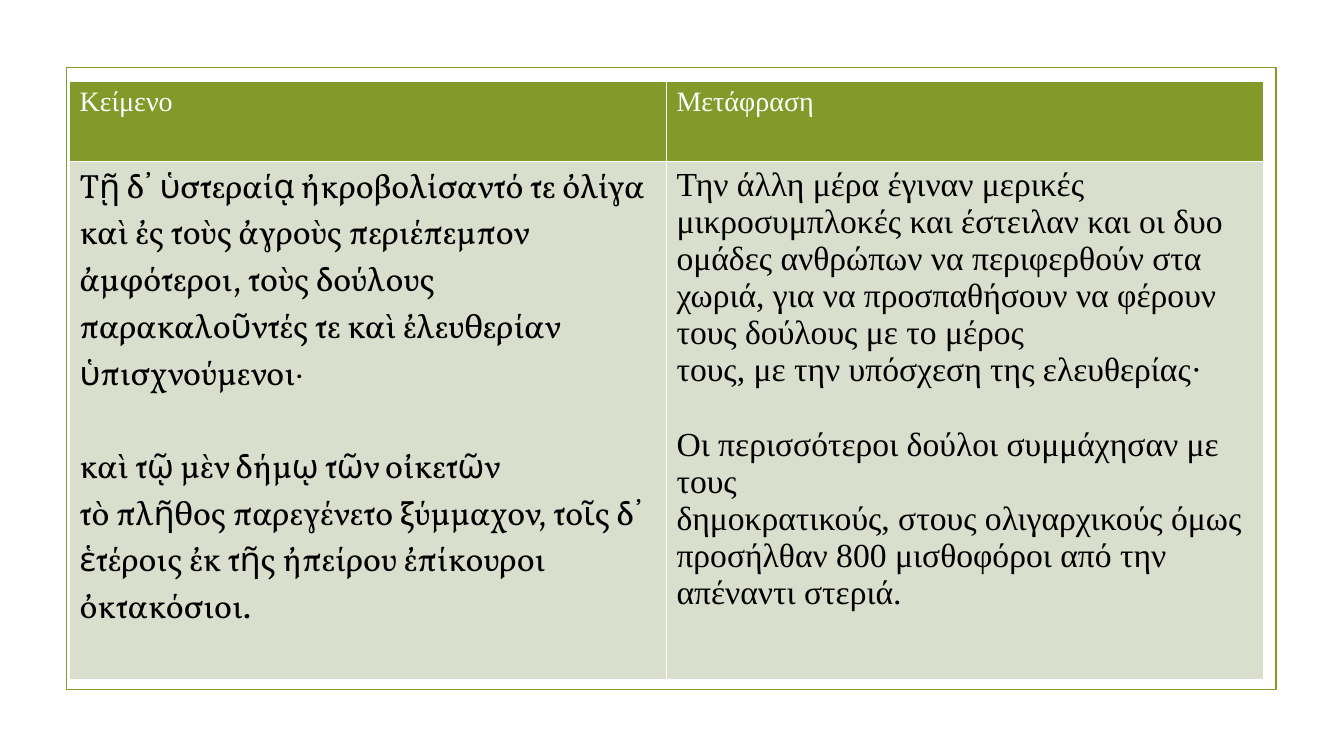
from lxml.etree import SubElement
from pptx import Presentation
from pptx.dml.color import RGBColor
from pptx.enum.shapes import MSO_SHAPE
from pptx.oxml.ns import qn
from pptx.util import Inches, Pt

GREEN, PALE, WHITE, BLACK = "83992A", "D9DECD", "FFFFFF", "000000"
SERIF, GREEK = "Times New Roman", "Vollkorn"
HEADER_HEIGHT = 0.79

HEADINGS = ["Κείμενο", "Μετάφραση"]
ANCIENT_TEXT = [
    "Τῇ δ᾽ ὑστεραίᾳ ἠκροβολίσαντό τε ὀλίγα καὶ ἐς τοὺς ἀγροὺς περιέπεμπον "
    "ἀμφότεροι, τοὺς δούλους παρακαλοῦντές τε καὶ ἐλευθερίαν ὑπισχνούμενοι·",
    "καὶ τῷ μὲν δήμῳ τῶν οἰκετῶν",
    "τὸ πλῆθος παρεγένετο ξύμμαχον, τοῖς δ᾽ ἑτέροις ἐκ τῆς ἠπείρου "
    "ἐπίκουροι ὀκτακόσιοι.",
]
TRANSLATION = [
    "Την άλλη μέρα έγιναν μερικές μικροσυμπλοκές και έστειλαν και οι δυο "
    "ομάδες ανθρώπων να περιφερθούν στα χωριά, για να προσπαθήσουν να φέρουν "
    "τους δούλους με το μέρος",
    "τους, με την υπόσχεση της ελευθερίας·",
    "Οι περισσότεροι δούλοι συμμάχησαν με τους",
    "δημοκρατικούς, στους ολιγαρχικούς όμως προσήλθαν 800 μισθοφόροι από την "
    "απέναντι στεριά.",
]


def color(value):
    return RGBColor.from_string(value)


def add_frame(slide, left, top, width, height):
    frame = slide.shapes.add_shape(
        MSO_SHAPE.RECTANGLE, Inches(left), Inches(top), Inches(width), Inches(height))
    frame.shadow.inherit = False
    frame.fill.background()
    frame.line.color.rgb = color(GREEN)
    frame.line.width = Pt(1.25)


def style_cell(cell, fill):
    properties = cell._tc.get_or_add_tcPr()
    for side in ("lnL", "lnR", "lnT", "lnB"):
        border = SubElement(properties, qn(f"a:{side}"), w=str(Pt(1)))
        SubElement(SubElement(border, qn("a:solidFill")), qn("a:srgbClr"), val=WHITE)
    cell.fill.solid()
    cell.fill.fore_color.rgb = color(fill)


def write_cell(cell, lines, font_name, size, font_color, gap_line=None, gap=0):
    cell.text_frame.text = "\n".join(lines)
    for index, paragraph in enumerate(cell.text_frame.paragraphs):
        if index == gap_line:
            paragraph.space_before = Pt(gap)
        for run in paragraph.runs:
            run.font.name = font_name
            run.font.size = Pt(size)
            run.font.bold = False
            run.font.color.rgb = color(font_color)


def add_comparison(slide, left, top, width, height):
    table = slide.shapes.add_table(
        2, 2, Inches(left), Inches(top), Inches(width), Inches(height)).table
    table.rows[0].height = Inches(HEADER_HEIGHT)
    table.rows[1].height = Inches(height - HEADER_HEIGHT)
    for column, heading in enumerate(HEADINGS):
        style_cell(table.cell(0, column), GREEN)
        style_cell(table.cell(1, column), PALE)
        write_cell(table.cell(0, column), [heading], SERIF, 20, WHITE)
    write_cell(table.cell(1, 0), ANCIENT_TEXT, GREEK, 24, BLACK, 1, 33.4)
    write_cell(table.cell(1, 1), TRANSLATION, SERIF, 24, BLACK, 2, 26.6)


def main():
    presentation = Presentation()
    presentation.slide_width = Inches(13.33)
    presentation.slide_height = Inches(7.5)
    slide = presentation.slides.add_slide(presentation.slide_layouts[6])
    add_frame(slide, 0.66, 0.67, 12, 6.17)
    add_comparison(slide, 0.69, 0.81, 11.84, 5.93)
    presentation.save("out.pptx")


if __name__ == "__main__":
    main()
